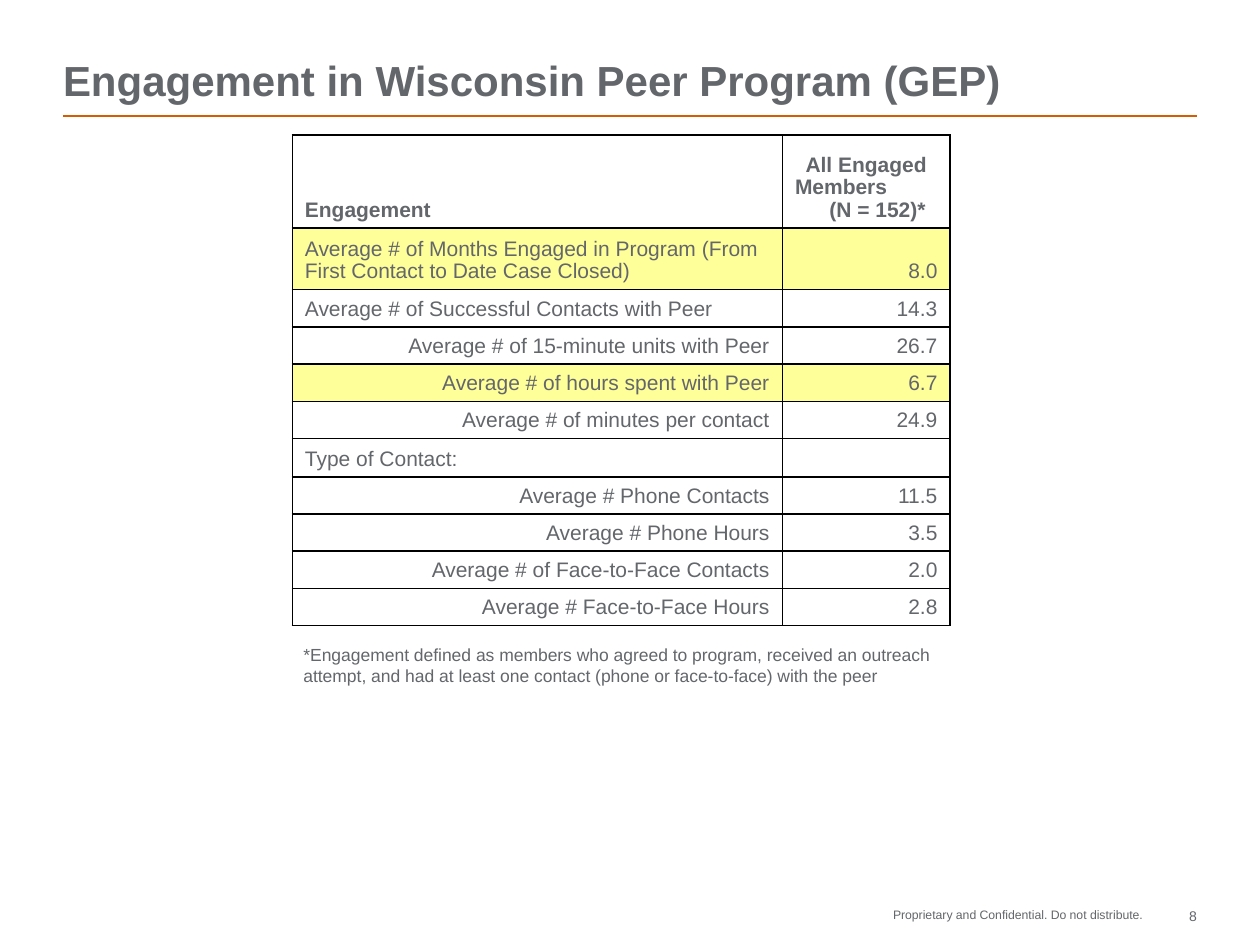
from dataclasses import dataclass

import pptx
import pptx.dml.color
import pptx.enum.shapes
import pptx.enum.text
import pptx.oxml.ns
import pptx.util
from lxml import etree

Inches = pptx.util.Inches
Pt = pptx.util.Pt
Align = pptx.enum.text.PP_ALIGN
Anchor = pptx.enum.text.MSO_ANCHOR
qn = pptx.oxml.ns.qn

GREY, ORANGE, YELLOW, BLACK = "63666A", "D45D00", "FFFF99", "000000"


@dataclass
class Measure:
    label: str
    value: str = ""
    indented: bool = False
    highlighted: bool = False


MEASURES = [
    Measure("Average # of Months Engaged in Program (From First Contact to Date Case Closed)",
            "8.0", highlighted=True),
    Measure("Average # of Successful Contacts with Peer", "14.3"),
    Measure("Average # of 15-minute units with Peer", "26.7", indented=True),
    Measure("Average # of hours spent with Peer", "6.7", indented=True, highlighted=True),
    Measure("Average # of minutes per contact", "24.9", indented=True),
    Measure("Type of Contact:"),
    Measure("Average # Phone Contacts", "11.5", indented=True),
    Measure("Average # Phone Hours", "3.5", indented=True),
    Measure("Average # of Face-to-Face Contacts", "2.0", indented=True),
    Measure("Average # Face-to-Face Hours", "2.8", indented=True),
]


def color(hex_code: str) -> pptx.dml.color.RGBColor:
    return pptx.dml.color.RGBColor.from_string(hex_code)


def write(paragraph, text: str, size: float, bold: bool = False,
          align=Align.LEFT, spacing: float = 1.0) -> None:
    paragraph.alignment = align
    paragraph.line_spacing = spacing
    run = paragraph.add_run()
    run.text = text
    run.font.name = "Arial"
    run.font.size = Pt(size)
    run.font.bold = bold
    run.font.color.rgb = color(GREY)


def clear_margins(frame) -> None:
    frame.margin_left = frame.margin_right = frame.margin_top = frame.margin_bottom = 0


def add_text(slide, left: float, top: float, width: float, height: float):
    box = slide.shapes.add_textbox(Inches(left), Inches(top), Inches(width), Inches(height))
    box.text_frame.word_wrap = True
    return box.text_frame


def style_cell(cell, fill: str = "") -> None:
    """Draw black borders on every side, then the fill."""
    cell.vertical_anchor = Anchor.BOTTOM
    properties = cell._tc.get_or_add_tcPr()
    for side in ("a:lnL", "a:lnR", "a:lnT", "a:lnB"):
        border = etree.SubElement(properties, qn(side), w=str(Pt(1)))
        solid = etree.SubElement(border, qn("a:solidFill"))
        etree.SubElement(solid, qn("a:srgbClr"), val=BLACK)
    if fill:
        cell.fill.solid()
        cell.fill.fore_color.rgb = color(fill)
    else:
        cell.fill.background()


def write_cell(cell, text: str, align=Align.LEFT, bold: bool = False) -> None:
    paragraph = cell.text_frame.paragraphs[0]
    if text:
        write(paragraph, text, 12, bold, align, 0.95)
    else:
        # An empty cell keeps the height of the table's text
        etree.SubElement(paragraph._p, qn("a:endParaRPr"), sz="1200")


def add_engagement_table(slide) -> None:
    header_height, first_height, total_height = 0.74, 0.49, 3.89
    row_height = (total_height - header_height - first_height) / (len(MEASURES) - 1)
    heights = [header_height, first_height] + [row_height] * (len(MEASURES) - 1)
    table = slide.shapes.add_table(len(heights), 2, Inches(2.32), Inches(1.07),
                                   Inches(5.22), Inches(total_height)).table
    table.first_row = table.horz_banding = False
    for column, width in zip(table.columns, (3.89, 1.33)):
        column.width = Inches(width)
    for row, height in zip(table.rows, heights):
        row.height = Inches(height)

    # Header row
    engagement, members = table.cell(0, 0), table.cell(0, 1)
    style_cell(engagement)
    style_cell(members)
    write_cell(engagement, "Engagement", bold=True)
    write_cell(members, "All Engaged", Align.CENTER, bold=True)
    write(members.text_frame.add_paragraph(), "Members", 12, True, Align.LEFT, 0.95)
    count = members.text_frame.add_paragraph()
    write(count, "(N = 152)*", 12, True, Align.CENTER, 0.95)
    count._p.get_or_add_pPr().set("marL", str(Inches(0.18)))

    # Measures
    for index, measure in enumerate(MEASURES, start=1):
        fill = YELLOW if measure.highlighted else ""
        label, value = table.cell(index, 0), table.cell(index, 1)
        style_cell(label, fill)
        style_cell(value, fill)
        write_cell(label, measure.label, Align.RIGHT if measure.indented else Align.LEFT)
        write_cell(value, measure.value, Align.RIGHT)


def main() -> None:
    deck = pptx.Presentation()
    deck.slide_width, deck.slide_height = Inches(10), Inches(7.5)
    slide = deck.slides.add_slide(deck.slide_layouts[5])

    # Title and rule
    title = slide.shapes.title
    title.left, title.top = Inches(0.5), Inches(0.17)
    title.width, title.height = Inches(9), Inches(0.67)
    clear_margins(title.text_frame)
    title.text_frame.vertical_anchor = Anchor.BOTTOM
    write(title.text_frame.paragraphs[0], "Engagement in Wisconsin Peer Program (GEP)",
          24, True, spacing=0.9)
    rule = slide.shapes.add_connector(pptx.enum.shapes.MSO_CONNECTOR.STRAIGHT,
                                      Inches(0.5), Inches(0.92), Inches(9.5), Inches(0.92))
    rule.line.color.rgb = color(ORANGE)
    rule.line.width = Pt(1)
    etree.SubElement(rule._element.spPr, qn("a:effectLst"))

    add_engagement_table(slide)

    # Table note
    note = add_text(slide, 2.31, 5.06, 5.24, 0.43)
    write(note.paragraphs[0],
          "*Engagement defined as members who agreed to program, received an outreach attempt, "
          "and had at least one contact (phone or face-to-face) with the peer", 10)

    # Footer
    notice = add_text(slide, 7.08, 7.2, 1.99, 0.12)
    notice.word_wrap = False
    clear_margins(notice)
    write(notice.paragraphs[0], "Proprietary and Confidential. Do not distribute.",
          7, align=Align.RIGHT)
    page_number = add_text(slide, 9.17, 7.2, 0.33, 0.17)
    clear_margins(page_number)
    write(page_number.paragraphs[0], "8", 8, align=Align.RIGHT)

    deck.save("out.pptx")


if __name__ == "__main__":
    main()
